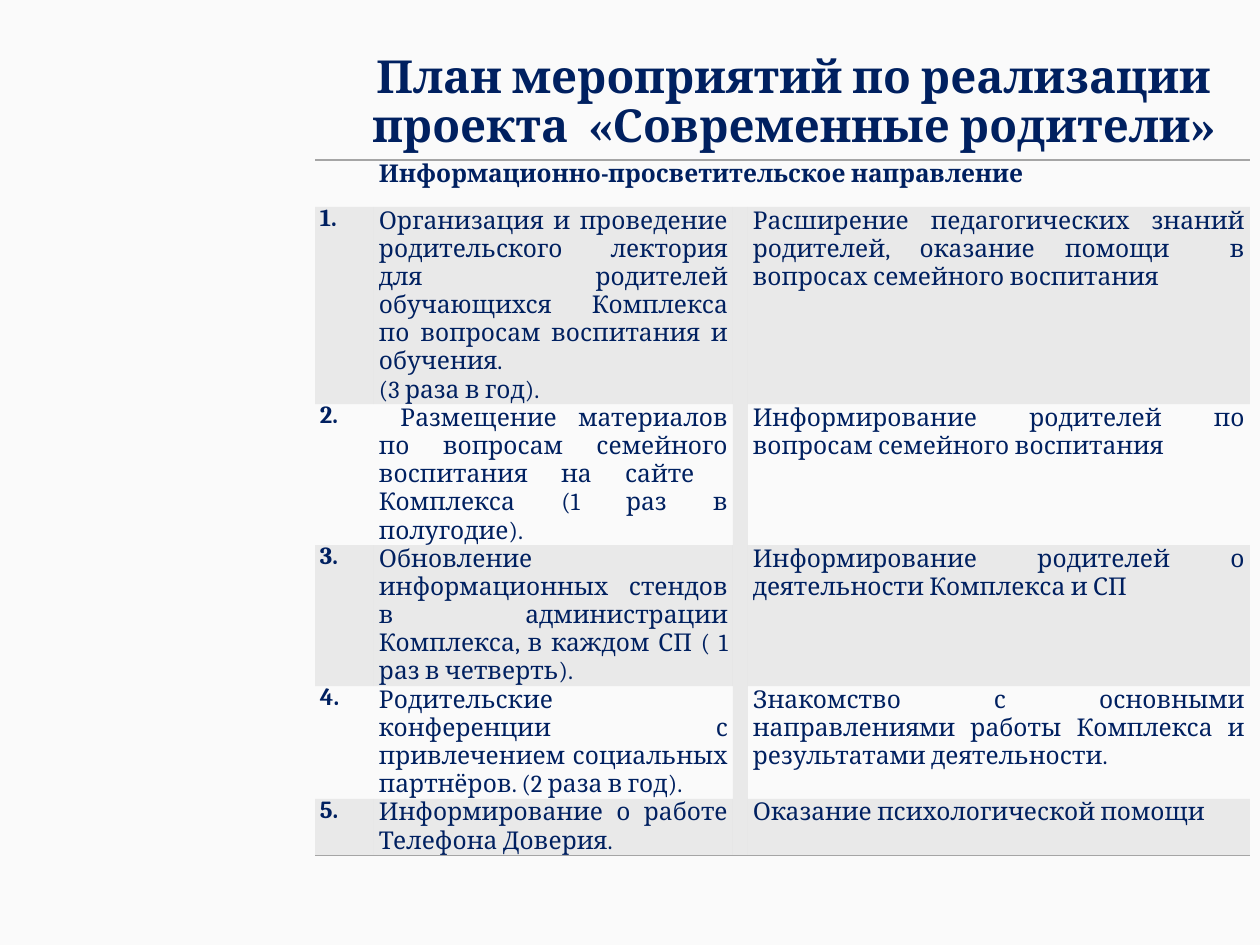
from lxml.etree import SubElement
from pptx import Presentation
from pptx.dml.color import RGBColor
from pptx.enum.text import MSO_ANCHOR, MSO_AUTO_SIZE, PP_ALIGN
from pptx.oxml.ns import qn
from pptx.util import Pt

# Content
TITLE = "План мероприятий по реализации проекта  «Современные родители»"
SECTION = "Информационно-просветительское направление"
ACTIVITIES = [
    (["Организация и проведение родительского лектория для родителей "
      "обучающихся Комплекса по вопросам воспитания и обучения.",
      "(3 раза в год)."],
     "Расширение педагогических знаний родителей, оказание помощи  "
     "в вопросах семейного воспитания"),
    ([" Размещение материалов по вопросам семейного воспитания на сайте  "
      "Комплекса (1 раз в полугодие)."],
     "Информирование родителей по вопросам семейного воспитания"),
    (["Обновление информационных стендов в администрации Комплекса, "
      "в каждом СП ( 1 раз в четверть)."],
     "Информирование родителей о деятельности Комплекса и СП"),
    (["Родительские конференции с привлечением социальных партнёров. "
      "(2 раза в год)."],
     "Знакомство с основными направлениями работы Комплекса "
     "и результатами деятельности."),
    (["Информирование о работе Телефона Доверия."],
     "Оказание психологической помощи"),
]

# Layout in px
PX = 914400 / 126
SLIDE_SIZE = (1260, 945)
TITLE_BOX = (328, 26, 932, 155)
TABLE_LEFT, TABLE_TOP = 315, 160
COLUMN_WIDTHS = [59, 359, 13, 502]
ROW_HEIGHTS = [47, 193, 102, 102, 102, 48]
CELL_INSET = 5

FONT = "Cambria"
NAVY = RGBColor(0x00, 0x20, 0x60)
GRAY = RGBColor(0xA5, 0xA5, 0xA5)
BACKGROUND = RGBColor(0xFA, 0xFA, 0xFA)
NO_STYLE = "{2D5ABB26-0587-4C30-8999-92F81FD0307C}"


def px(value):
    return round(value * PX)


def set_font(paragraph, size, bold):
    font = paragraph.font
    font.name, font.size, font.bold = FONT, Pt(size), bold
    font.color.rgb = NAVY


def write(cell, lines, bold=False, numbered=False):
    cell.text = "\n".join(lines)
    for paragraph in cell.text_frame.paragraphs:
        paragraph.alignment = PP_ALIGN.JUSTIFY
        set_font(paragraph, 14, bold)
        if numbered:
            paragraph.line_spacing = Pt(14.7)
            paragraph.space_after = Pt(10)


def shade(cell):
    cell.fill.solid()
    cell.fill.fore_color.rgb = GRAY
    color = cell._tc.tcPr.find(f".//{qn('a:srgbClr')}")
    SubElement(color, qn("a:alpha"), val="20000")


def set_borders(cell, visible):
    properties = cell._tc.get_or_add_tcPr()
    for index, side in enumerate("LRTB"):
        line = SubElement(properties, qn(f"a:ln{side}"), w=str(Pt(1)))
        if side in visible:
            fill = SubElement(line, qn("a:solidFill"))
            SubElement(fill, qn("a:srgbClr"), val=str(GRAY))
        else:
            SubElement(line, qn("a:noFill"))
        properties.insert(index, line)


presentation = Presentation()
presentation.slide_width, presentation.slide_height = map(px, SLIDE_SIZE)
slide = presentation.slides.add_slide(presentation.slide_layouts[5])
slide.background.fill.solid()
slide.background.fill.fore_color.rgb = BACKGROUND

# Title
title = slide.shapes.title
title.left, title.top, title.width, title.height = map(px, TITLE_BOX)
title.text = TITLE
title.text_frame.word_wrap = True
title.text_frame.auto_size = MSO_AUTO_SIZE.NONE
title.text_frame.vertical_anchor = MSO_ANCHOR.MIDDLE
heading = title.text_frame.paragraphs[0]
heading.alignment = PP_ALIGN.CENTER
heading.line_spacing = 0.9
set_font(heading, 26, True)

# Table grid
table = slide.shapes.add_table(
    len(ROW_HEIGHTS), len(COLUMN_WIDTHS), px(TABLE_LEFT), px(TABLE_TOP),
    px(sum(COLUMN_WIDTHS)), px(sum(ROW_HEIGHTS))).table
table._tbl.tblPr.find(qn("a:tableStyleId")).text = NO_STYLE
table.first_row = table.horz_banding = False
for column, width in zip(table.columns, COLUMN_WIDTHS):
    column.width = px(width)
for row, height in zip(table.rows, ROW_HEIGHTS):
    row.height = px(height)

# Cell bands, insets and rules
last = len(ACTIVITIES)
for row_index, row in enumerate(table.rows):
    for column_index, cell in enumerate(row.cells):
        cell.margin_left = cell.margin_right = px(CELL_INSET)
        cell.margin_top = cell.margin_bottom = 0
        gap = column_index == 2 and row_index > 0
        if row_index % 2 or gap:
            shade(cell)
        else:
            cell.fill.background()
        visible = "TB" if row_index == 0 else "B" if row_index == last else ""
        set_borders(cell, "B" if gap and row_index == 1 else visible)

# Cell text
table.cell(0, 1).merge(table.cell(0, 3))
table.cell(1, 2).merge(table.cell(last, 2))
write(table.cell(0, 1), [SECTION], bold=True)
for number, (activity, result) in enumerate(ACTIVITIES, start=1):
    write(table.cell(number, 0), [f"{number}."], bold=True, numbered=True)
    write(table.cell(number, 1), activity)
    write(table.cell(number, 3), [result])

presentation.save("out.pptx")
